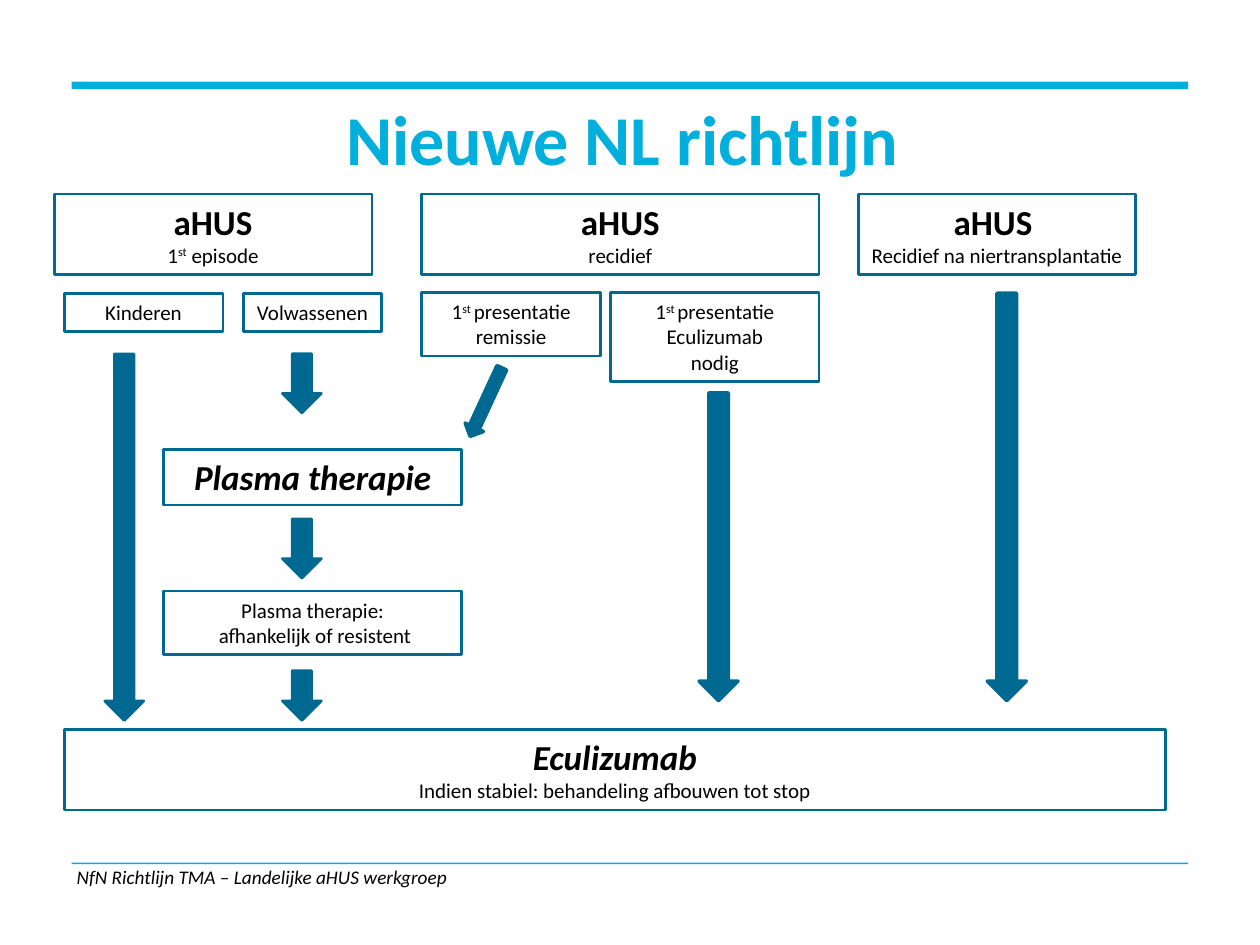
from pptx import Presentation
from pptx.dml.color import RGBColor as RGB
from pptx.enum.shapes import MSO_SHAPE as Kind
from pptx.enum.text import MSO_ANCHOR as Anchor, PP_ALIGN as Align
from pptx.util import Pt

CYAN = RGB(0x00, 0xAF, 0xDC)
TEAL = RGB(0x00, 0x69, 0x91)
BLACK = RGB(0, 0, 0)
SHAFT = 22.3


def write(para, text, size=12, bold=False, italic=False, color=BLACK, align=Align.CENTER):
    """Fill a paragraph; parts between carets are superscript."""
    para.alignment = align
    for i, part in enumerate(text.split("^")):
        run = para.add_run()
        run.text = part
        font = run.font
        font.name, font.size = "Calibri", Pt(size)
        font.bold, font.italic = bold, italic
        font.color.rgb = color
        if i % 2:
            run._r.get_or_add_rPr().set("baseline", "30000")


def form(slide, kind, box, fill=None, line=None, width=1.5):
    """Add a preset shape without shadow."""
    shape = slide.shapes.add_shape(kind, *map(Pt, box))
    shape.shadow.inherit = False
    if fill is None:
        shape.fill.background()
    else:
        shape.fill.solid()
        shape.fill.fore_color.rgb = fill
    if line is None:
        shape.line.fill.background()
    else:
        shape.line.color.rgb = line
        shape.line.width = Pt(width)
    return shape


def card(slide, box, *lines, head=None, italic=False):
    """Add an outlined box with an optional large heading."""
    frame = form(slide, Kind.RECTANGLE, box, line=TEAL).text_frame
    frame.word_wrap = True
    frame.vertical_anchor = Anchor.TOP
    rows = [(head, dict(size=20, bold=True, italic=italic))] if head else []
    rows += [(line, {}) for line in lines]
    for i, (text, style) in enumerate(rows):
        para = frame.add_paragraph() if i else frame.paragraphs[0]
        write(para, text, **style)


def arrow(slide, mid, top, high, wide=SHAFT, width=1.5):
    """Add a down arrow centred on mid."""
    box = (mid - wide / 2, top, wide, high)
    return form(slide, Kind.DOWN_ARROW, box, TEAL, TEAL, width)


def frame_page(slide, box):
    """Place the two rules, the title and the foot text."""
    x, y, w, h = box
    form(slide, Kind.RECTANGLE, (x, y, w, 4.3), CYAN)
    form(slide, Kind.RECTANGLE, (x, y + h, w, 0.8), CYAN)

    title = slide.shapes.title
    title.left, title.top, title.width, title.height = map(Pt, (x - 4.3, y + 13.7, w, 41.8))
    text = title.text_frame
    text.margin_left = text.margin_right = text.margin_top = text.margin_bottom = 0
    text.vertical_anchor = Anchor.MIDDLE
    text.word_wrap = True
    write(text.paragraphs[0], "Nieuwe NL richtlijn", size=40, bold=True, color=CYAN)
    text.paragraphs[0].line_spacing = Pt(42)

    foot = slide.shapes.add_textbox(*map(Pt, (x - 4.3, y + h - 2.2, 436, 21))).text_frame
    foot.word_wrap = True
    write(foot.paragraphs[0], "NfN Richtlijn TMA – Landelijke aHUS werkgroep",
          size=11, italic=True, align=Align.LEFT)


def first(slide, box):
    """Place the first episode column with its two age groups."""
    x, y, w, h = box
    card(slide, (x, y, w, 46), "1^st^ episode", head="aHUS")
    card(slide, (x + 5.7, y + 57, 90.7, 21.6), "Kinderen")
    card(slide, (x + 108, y + 57, 79.2, 21.6), "Volwassenen")
    arrow(slide, x + 40, y + 91.4, h - 91.4)
    arrow(slide, x + 141.5, y + 91.4, 33.8)


def plasma(slide, box):
    """Place the plasma therapy steps."""
    x, y, w, h = box
    mid = x + 78.9
    card(slide, (x, y, w, 31.7), head="Plasma therapie", italic=True)
    arrow(slide, mid, y + 39.6, 33.8)
    card(slide, (x, y + 80.7, w, 36.3), "Plasma therapie:", " afhankelijk of resistent")
    arrow(slide, mid, y + 126.3, h - 126.3)


def relapse(slide, box):
    """Place the relapse column with its two cases."""
    x, y, w, h = box
    card(slide, (x, y, w, 46), "recidief", head="aHUS")
    card(slide, (x, y + 56.4, 102.2, 36.3), "1^st ^presentatie", "remissie")
    card(slide, (x + w - 119, y + 56.4, 119, 51), "1^st ^presentatie", "Eculizumab", "nodig")
    slant = arrow(slide, x + 36.7, y + 97.4, 43.2, wide=11.5, width=2)
    slant.adjustments[0] = 0.53
    slant.adjustments[1] = 0.5
    slant.rotation = 24.8
    arrow(slide, x + 169.6, y + 113.7, h - 113.7, width=2)


def graft(slide, box):
    """Place the column for relapse after a transplant."""
    x, y, w, h = box
    card(slide, (x, y, w, 46), "Recidief na niertransplantatie", head="aHUS ")
    arrow(slide, x + 84.9, y + 56.7, h - 56.7, width=2)


def main():
    """Build and save the slide."""
    deck = Presentation()
    deck.slide_width, deck.slide_height = Pt(720), Pt(540)
    slide = deck.slides.add_slide(deck.slide_layouts[5])
    frame_page(slide, (41, 46.7, 638, 446.3))
    first(slide, (31, 110.8, 181.5, 300.9))
    relapse(slide, (241, 110.8, 227, 289.6))
    graft(slide, (490.4, 110.8, 158.6, 289.6))
    plasma(slide, (93.6, 257, 170.2, 154.7))
    card(slide, (36.7, 416.8, 629.3, 46), "Indien stabiel: behandeling afbouwen tot stop",
         head="Eculizumab", italic=True)
    deck.save("out.pptx")


if __name__ == "__main__":
    main()
